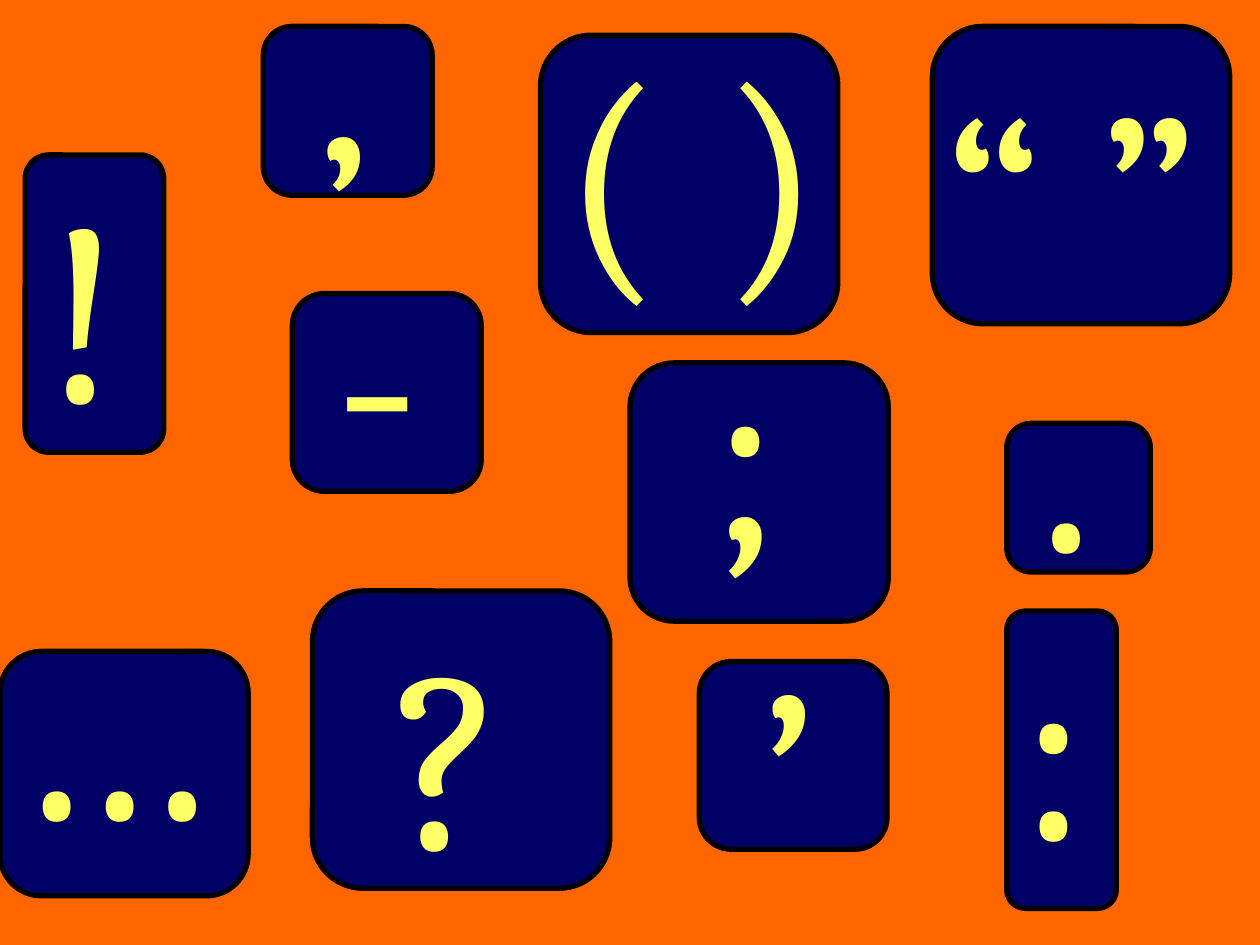
from dataclasses import dataclass

from pptx import Presentation
from pptx.dml.color import RGBColor
from pptx.enum.shapes import MSO_SHAPE
from pptx.enum.text import MSO_AUTO_SIZE
from pptx.util import Emu, Pt

PX = 9144  # 100 px to the inch


@dataclass(frozen=True)
class Theme:
    background: RGBColor = RGBColor(0xFF, 0x66, 0x00)
    card: RGBColor = RGBColor(0x00, 0x00, 0x66)
    outline: RGBColor = RGBColor(0x00, 0x00, 0x00)
    mark: RGBColor = RGBColor(0xFF, 0xFF, 0x66)
    font: str = "Cambria"
    mark_size: int = 150
    outline_width: int = 3
    corner: float = 0.17


class Painter:
    def __init__(self, page, theme):
        self.page = page
        self.theme = theme

    def background(self):
        fill = self.page.background.fill
        fill.solid()
        fill.fore_color.rgb = self.theme.background

    def card(self, parent, bounds):
        card = parent.shapes.add_shape(MSO_SHAPE.ROUNDED_RECTANGLE, *to_emu(bounds))
        card.adjustments[0] = self.theme.corner
        card.shadow.inherit = False
        card.fill.solid()
        card.fill.fore_color.rgb = self.theme.card
        card.line.color.rgb = self.theme.outline
        card.line.width = Pt(self.theme.outline_width)

    def mark(self, parent, text, bounds):
        box = parent.shapes.add_textbox(*to_emu(bounds))
        frame = box.text_frame
        frame.word_wrap = True
        frame.auto_size = MSO_AUTO_SIZE.SHAPE_TO_FIT_TEXT
        span = frame.paragraphs[0].add_run()
        span.text = text
        span.font.name = self.theme.font
        span.font.size = Pt(self.theme.mark_size)
        span.font.color.rgb = self.theme.mark

    def punctuation_card(self, text, card_bounds, mark_bounds):
        group = self.page.shapes.add_group_shape()
        self.card(group, card_bounds)
        self.mark(group, text, mark_bounds)


def to_emu(lengths):
    return [Emu(length * PX) for length in lengths]


MARK_WIDTH = 149
MARK_HEIGHT = 260

# Mark, card bounds, then left, top and any wider width of its text
CARDS = [
    ("!", (20, 123, 110, 236), (28, 107)),
    (".", (799, 336, 114, 118), (815, 225)),
    ("’", (209, 21, 134, 134), (240, 36)),
    (",", (555, 525, 149, 149), (595, 359)),
    ("“ ”", (740, 21, 236, 236), (740, 21, 260)),
    ("…", (0, 517, 197, 194), (0, 438, 181)),
    ("( )", (429, 28, 236, 236), (437, 0, 256)),
    (":", (799, 485, 87, 236), (799, 454)),
    (";", (500, 288, 205, 205), (555, 218)),
    ("-", (232, 233, 150, 157), (256, 162)),
    ("?", (248, 469, 236, 236), (303, 462)),
]


def main():
    deck = Presentation()
    deck.slide_width, deck.slide_height = to_emu((1000, 750))
    page = deck.slides.add_slide(deck.slide_layouts[6])
    painter = Painter(page, Theme())
    painter.background()

    # Punctuation cards, back to front
    for text, card_bounds, (left, top, *wider) in CARDS:
        width = wider[0] if wider else MARK_WIDTH
        painter.punctuation_card(text, card_bounds, (left, top, width, MARK_HEIGHT))

    deck.save("out.pptx")


if __name__ == "__main__":
    main()
